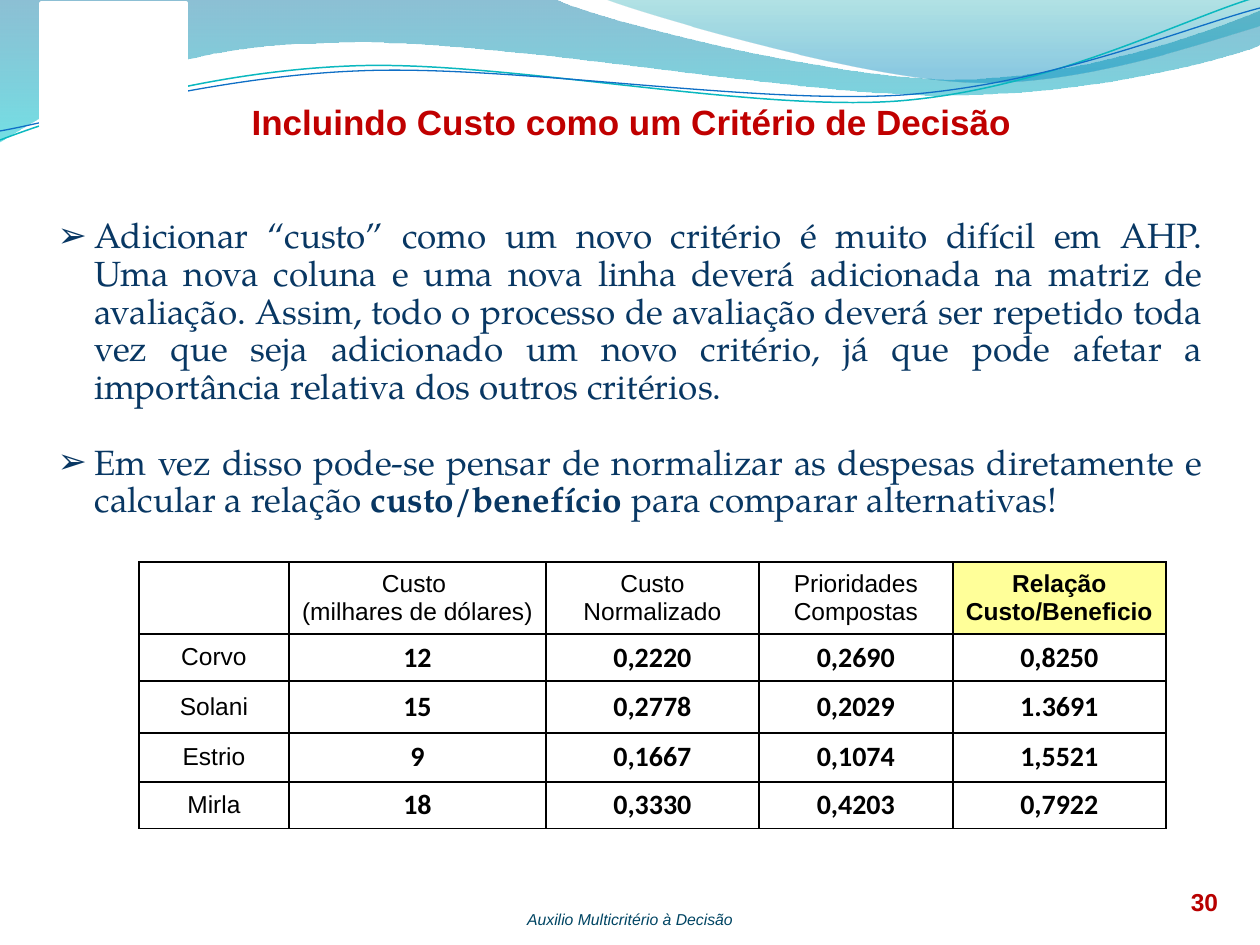
from lxml import etree
from pptx import Presentation, util as u
from pptx.dml.color import RGBColor
from pptx.enum import shapes, text
from pptx.oxml.ns import qn

PX = u.Inches(1) // 126

TITLE = "Incluindo Custo como um Critério de Decisão"
# Each bullet is a list of runs (text, bold); "\n" is a line break.
BULLETS = [
    [("Adicionar “custo” como um novo critério é muito difícil em AHP.", False),
     ("\n", False),
     ("Uma nova coluna e uma nova linha deverá adicionada na matriz de avaliação. "
      "Assim, todo o processo de avaliação deverá ser repetido toda vez que seja "
      "adicionado um novo critério, já que pode afetar a importância relativa dos "
      "outros critérios.", False)],
    [("Em vez disso pode-se pensar de normalizar as despesas diretamente e "
      "calcular a relação ", False),
     ("custo/benefício", True),
     (" para comparar alternativas!", False)],
]
ROWS = [
    ["", "Custo \n(milhares de dólares)", "Custo Normalizado",
     "Prioridades Compostas", "Relação Custo/Beneficio"],
    ["Corvo", "12", "0,2220", "0,2690", "0,8250"],
    ["Solani", "15", "0,2778", "0,2029", "1.3691"],
    ["Estrio", "9", "0,1667", "0,1074", "1,5521"],
    ["Mirla", "18", "0,3330", "0,4203", "0,7922"],
]
COLUMN_WIDTHS = [150, 257, 213, 194, 213]
ROW_HEIGHTS = [72, 45, 52, 49, 46]

# Outlines: a start point, then line ends (x, y) or curves (three points flat).
# Gradient stops: (position, colour, opacity in percent).
BANDS = [
    ([(0, -1), (554, -1), (600, 21, 837, 79, 955, 79), (1074, 79, 1207, 33, 1260, 11),
      (1261, 45), (1239, 55, 1096, 96, 940, 95), (784, 95, 481, 35, 324, 43),
      (163, 44, 58, 105, -1, 142), (0, -1)],
     [(0, "0074A1", 45), (1, "00C6CF", 55)]),
    ([(604, -1), (641, 14, 859, 78, 969, 82), (1079, 87, 1211, 40, 1260, 26),
      (1260, 0), (604, -1)],
     [(0, "00A1A9", 30), (0.8, "008BBF", 45)]),
]
WAVES = [
    ([(0, 140), (60, 117, 199, 72, 349, 66), (498, 59, 747, 112, 898, 101),
      (1050, 89, 1182, 19, 1257, -3)], "0AB8BF", 0.85),
    ([(0, 131), (59, 121, 207, 77, 357, 71), (508, 64, 752, 105, 903, 95),
      (1053, 84, 1187, 27, 1260, 8)], "0F6FC6", 0.75),
]


def px(*lengths):
    return [length * PX for length in lengths]


def rgb(value):
    return RGBColor.from_string(value)


def set_font(font, name, size, color, bold=False, italic=False):
    font.name, font.size = name, u.Pt(size)
    font.bold, font.italic = bold, italic
    font.color.rgb = rgb(color)


def add_outline(slide, outline, close):
    """Draw the points as lines, then join each curve's three lines into one curve."""
    points = [part[i:i + 2] for part in outline for i in range(0, len(part), 2)]
    builder = slide.shapes.build_freeform(*points[0], scale=PX)
    builder.add_line_segments(points[1:], close=close)
    shape = builder.convert_to_shape()
    shape.shadow.inherit = False
    lines = iter(list(shape.element.iter(qn("a:lnTo"))))
    for part in outline[1:]:
        first = next(lines)
        if len(part) == 6:
            first.addprevious(curve := etree.Element(qn("a:cubicBezTo")))
            for line in (first, next(lines), next(lines)):
                curve.append(line[0])
                line.getparent().remove(line)
    return shape


def add_background(slide):
    for outline, stops in BANDS:
        band = add_outline(slide, outline, True)
        band.line.fill.background()
        band.fill.gradient()
        band.fill.gradient_angle = 270
        for stop, (position, color, _) in zip(band.fill.gradient_stops, stops):
            stop.position, stop.color.rgb = position, rgb(color)
        for color, (_, _, opacity) in zip(band.element.iter(qn("a:srgbClr")), stops):
            etree.SubElement(color, qn("a:alpha"), val=str(opacity * 1000))
    for outline, color, width in WAVES:
        wave = add_outline(slide, outline, False)
        wave.fill.background()
        wave.line.color.rgb, wave.line.width = rgb(color), u.Pt(width)
    cover = slide.shapes.add_shape(shapes.MSO_SHAPE.RECTANGLE, *px(41, 3, 145, 123))
    cover.shadow.inherit = False
    cover.fill.solid()
    cover.fill.fore_color.rgb = cover.line.color.rgb = rgb("FFFFFF")
    cover.line.width = u.Pt(2)


def place(shape, left, top, width, height):
    shape.left, shape.top, shape.width, shape.height = px(left, top, width, height)
    shape.text_frame.auto_size = text.MSO_AUTO_SIZE.NONE
    shape.text_frame.vertical_anchor = text.MSO_ANCHOR.TOP


def fill_title(title):
    place(title, 239, 94, 1020, 84)
    paragraph = title.text_frame.paragraphs[0]
    paragraph.alignment = text.PP_ALIGN.LEFT
    run = paragraph.add_run()
    run.text = TITLE
    set_font(run.font, "Arial", 20, "C00000", bold=True)


def fill_body(body):
    place(body, 45, 212, 1171, 318)
    for index, runs in enumerate(BULLETS):
        frame = body.text_frame
        paragraph = frame.add_paragraph() if index else frame.paragraphs[0]
        paragraph.alignment = text.PP_ALIGN.JUSTIFY
        paragraph.line_spacing = 0.9
        paragraph.space_before = u.Pt(21.5 if index else 0)
        properties = paragraph._p.get_or_add_pPr()
        properties.set("marL", str(37 * PX))
        properties.set("indent", str(-37 * PX))
        etree.SubElement(properties, qn("a:buChar"), char="➢")
        for content, bold in runs:
            if content == "\n":
                paragraph.add_line_break()
                continue
            run = paragraph.add_run()
            run.text = content
            set_font(run.font, "TeX Gyre Pagella", 20, "083763", bold)


def add_borders(cell):
    properties = cell._tc.get_or_add_tcPr()
    for side in ("lnL", "lnR", "lnT", "lnB"):
        line = etree.SubElement(properties, qn("a:" + side), w=str(u.Pt(1)))
        fill = etree.SubElement(line, qn("a:solidFill"))
        etree.SubElement(fill, qn("a:srgbClr"), val="000000")


def add_cost_table(slide):
    frame = slide.shapes.add_table(
        len(ROWS), len(COLUMN_WIDTHS),
        *px(139, 562, sum(COLUMN_WIDTHS), sum(ROW_HEIGHTS)))
    table = frame.table
    table.first_row = table.horz_banding = False
    for column, width in zip(table.columns, COLUMN_WIDTHS):
        column.width = width * PX
    for row, height in zip(table.rows, ROW_HEIGHTS):
        row.height = height * PX
    for r, values in enumerate(ROWS):
        for c, value in enumerate(values):
            cell = table.cell(r, c)
            cell.vertical_anchor = text.MSO_ANCHOR.MIDDLE
            add_borders(cell)
            highlighted = r == 0 and c == len(values) - 1
            if highlighted:
                cell.fill.solid()
                cell.fill.fore_color.rgb = rgb("FFFF99")
            else:
                cell.fill.background()
            is_number = r > 0 and c > 0
            name, size = ("Calibri", 16) if is_number else ("Arial", 14)
            cell.text = value
            for paragraph in cell.text_frame.paragraphs:
                paragraph.alignment = text.PP_ALIGN.CENTER
                for run in paragraph.runs:
                    set_font(run.font, name, size, "000000", is_number or highlighted)


def add_label(slide, content, box, size, color, **style):
    frame = slide.shapes.add_textbox(*px(*box)).text_frame
    frame.word_wrap = True
    paragraph = frame.paragraphs[0]
    paragraph.alignment = text.PP_ALIGN.CENTER
    run = paragraph.add_run()
    run.text = content
    set_font(run.font, "Arial", size, color, **style)
    return frame


def main():
    presentation = Presentation()
    presentation.slide_width, presentation.slide_height = px(1260, 945)
    slide = presentation.slides.add_slide(presentation.slide_layouts[1])
    title, body = slide.placeholders
    add_background(slide)
    footer = add_label(slide, "Auxilio Multicritério à Decisão", (0, 910, 1260, 19),
                       9, "004563", italic=True)
    footer.margin_left = footer.margin_right = footer.margin_top = footer.margin_bottom = 0
    number = add_label(slide, "30", (1152, 868, 105, 50), 14, "B80000", bold=True)
    number.paragraphs[0].line_spacing = u.Pt(24)
    for placeholder in (title, body):  # bring in front of the background
        slide.shapes.element.append(placeholder.element)
    fill_title(title)
    fill_body(body)
    add_cost_table(slide)
    presentation.save("out.pptx")


if __name__ == "__main__":
    main()
